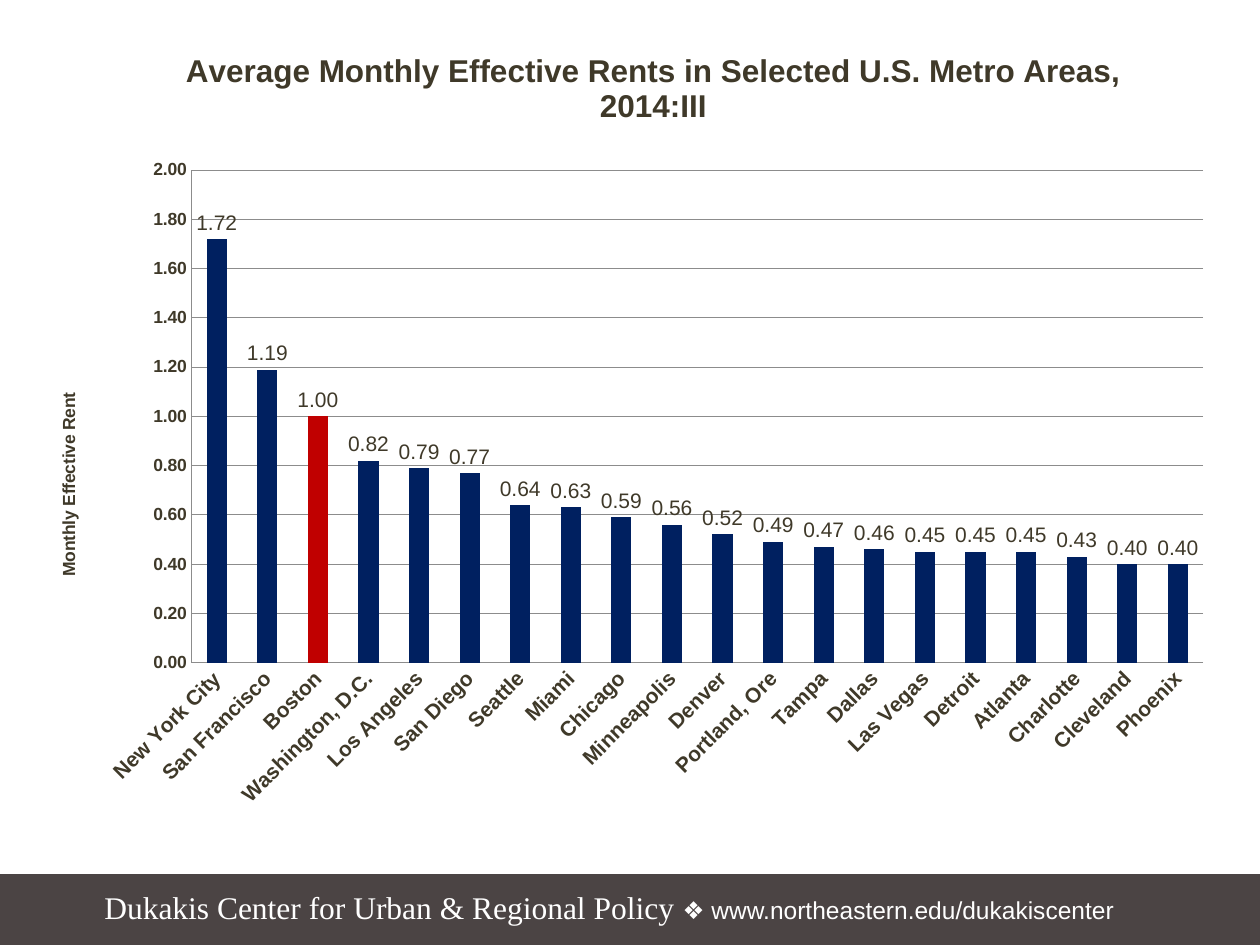
"""Build a slide with a column chart of metro area rents."""
from lxml.etree import SubElement as Sub
from pptx import Presentation
from pptx.chart.data import CategoryChartData as Data
from pptx.dml.color import RGBColor
from pptx.enum.chart import XL_CHART_TYPE as Kind, XL_LABEL_POSITION as Spot, XL_TICK_MARK as Tick
from pptx.enum.shapes import MSO_SHAPE as Shape
from pptx.oxml.ns import qn
from pptx.util import Inches, Pt

TITLE = "Average Monthly Effective Rents in Selected U.S. Metro Areas, 2014:III"
SIDE = "Monthly Effective Rent"
RENTS = {
    "New York City": 1.72, "San Francisco": 1.19, "Boston": 1, "Washington, D.C.": 0.82,
    "Los Angeles": 0.79, "San Diego": 0.77, "Seattle": 0.64, "Miami": 0.63,
    "Chicago": 0.59, "Minneapolis": 0.56, "Denver": 0.52, "Portland, Ore": 0.49,
    "Tampa": 0.47, "Dallas": 0.46, "Las Vegas": 0.45, "Detroit": 0.45,
    "Atlanta": 0.45, "Charlotte": 0.43, "Cleveland": 0.4, "Phoenix": 0.4,
}
FOCUS = "Boston"
FOOTER = [
    ("Dukakis Center for Urban & Regional Policy ", 18, "Times New Roman"),
    ("❖ www.northeastern.edu/dukakiscenter", 14, "Arial"),
]
WIDE, HIGH = 9.48, 6.21
INK = RGBColor(0x3F, 0x39, 0x29)
NAVY = RGBColor(0x00, 0x20, 0x60)
RED = RGBColor(0xC0, 0x00, 0x00)
GRAY = RGBColor(0x4B, 0x44, 0x44)
WHITE = RGBColor(0xFF, 0xFF, 0xFF)
RULE = RGBColor(0x8C, 0x8C, 0x8C)


def style(font, size, bold=False, color=INK, face="Arial"):
    font.size, font.bold, font.name = Pt(size), bold, face
    font.color.rgb = color


def write(para, text, **look):
    run = para.add_run()
    run.text = text
    style(run.font, **look)


def place(node, index, **spots):
    for old in node.findall(qn("c:layout")):
        node.remove(old)
    layout = Sub(node, qn("c:layout"))
    node.insert(index, layout)
    manual = Sub(layout, qn("c:manualLayout"))
    if "w" in spots:
        Sub(manual, qn("c:layoutTarget")).set("val", "inner")
    for key in "xy":
        Sub(manual, qn(f"c:{key}Mode")).set("val", "edge")
    for key, value in spots.items():
        share = value / (WIDE if key in "xw" else HIGH)
        Sub(manual, qn(f"c:{key}")).set("val", str(share))


def head(title, text, size, x, y):
    write(title.text_frame.paragraphs[0], text, size=size, bold=True)
    place(title.element, 1, x=x, y=y)


def rule(line):
    line.color.rgb, line.width = RULE, Pt(0.5)


def add_footer(slide):
    bar = slide.shapes.add_shape(
        Shape.RECTANGLE, Inches(-0.01), Inches(6.94), Inches(10.04), Inches(0.58))
    bar.shadow.inherit = False
    bar.fill.solid()
    bar.fill.fore_color.rgb = bar.line.color.rgb = GRAY
    bar.line.width = Pt(0.75)
    box = slide.shapes.add_textbox(Inches(0.73), Inches(7), Inches(8.53), Inches(0.4))
    box.text_frame.word_wrap = True
    for text, size, face in FOOTER:
        write(box.text_frame.paragraphs[0], text, size=size, face=face, color=WHITE)


def add_rents(slide):
    data = Data()
    data.categories = list(RENTS)
    data.add_series("Series 1", list(RENTS.values()))
    chart = slide.shapes.add_chart(
        Kind.COLUMN_CLUSTERED, Inches(0.26), Inches(0.31), Inches(WIDE), Inches(HIGH), data).chart
    style(chart.font, 10)
    chart.has_legend = False
    head(chart.chart_title, TITLE, 18, 1.17, 0.04)

    cats, vals = chart.category_axis, chart.value_axis
    for axis, size in ((cats, 12), (vals, 10)):
        axis.major_tick_mark = axis.minor_tick_mark = Tick.NONE
        rule(axis.format.line)
        style(axis.tick_labels.font, size, bold=True)
    turn = next(cats._element.iter(qn("a:bodyPr")))
    turn.set("rot", "-2700000")
    vals.minimum_scale, vals.maximum_scale, vals.major_unit = 0, 2, 0.2
    vals.tick_labels.number_format = "0.00"
    vals.tick_labels.number_format_is_linked = False
    rule(vals.major_gridlines.format.line)
    head(vals.axis_title, SIDE, 10, 0.17, 2.78)
    next(vals.axis_title.element.iter(qn("a:bodyPr"))).set("rot", "-5400000")

    plot = chart.plots[0]
    plot.gap_width, plot.vary_by_categories = 150, False
    bars = plot.series[0]
    spot = bars.points[list(RENTS).index(FOCUS)]
    for part, color in ((bars, NAVY), (spot, RED)):
        part.format.fill.solid()
        part.format.fill.fore_color.rgb = color
    labels = bars.data_labels
    labels.show_value = True
    labels.number_format, labels.number_format_is_linked = "#,##0.00", False
    labels.position = Spot.OUTSIDE_END
    style(labels.font, 12)
    area = next(chart.element.iter(qn("c:plotArea")))
    place(area, 0, x=1.26, y=1.04, w=8.03, h=3.91)


def main():
    deck = Presentation()
    deck.slide_width, deck.slide_height = Inches(10), Inches(7.5)
    slide = deck.slides.add_slide(deck.slide_layouts[6])
    add_footer(slide)
    add_rents(slide)
    deck.save("out.pptx")


if __name__ == "__main__":
    main()
